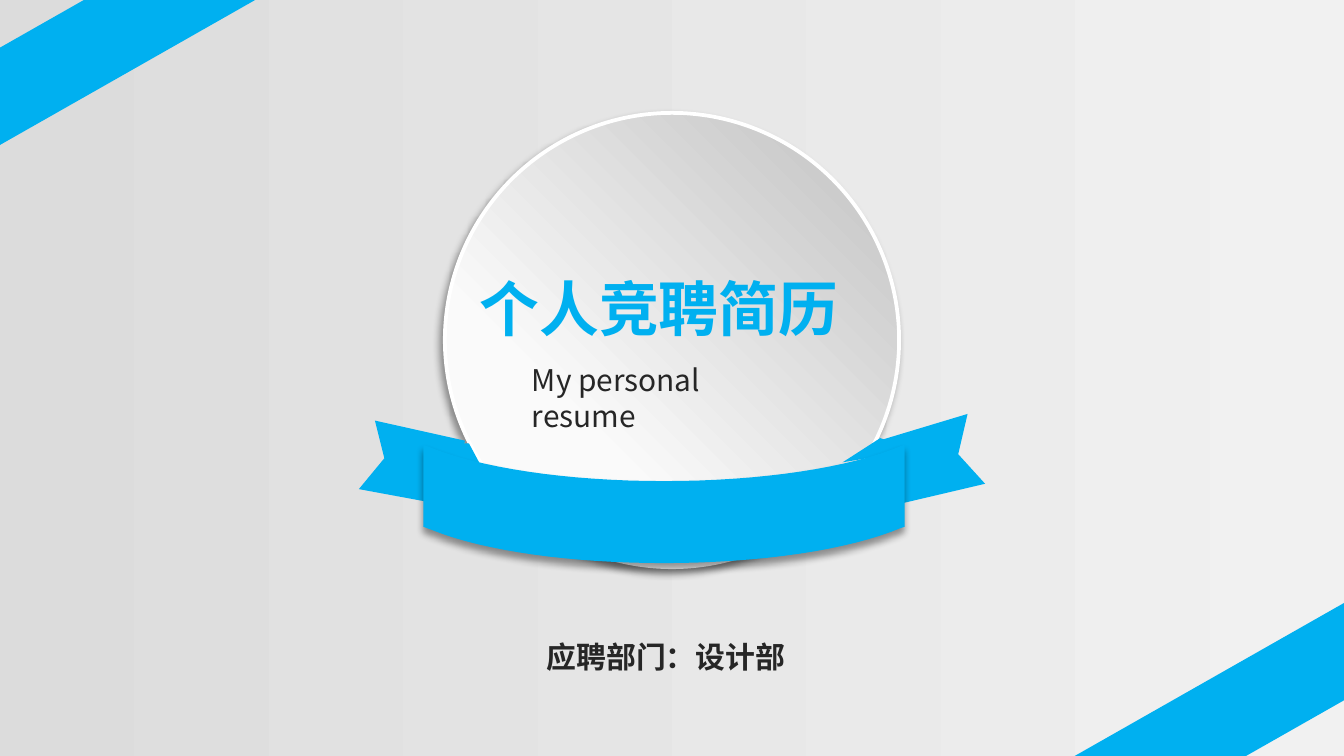
from dataclasses import dataclass

from lxml.etree import SubElement as Sub
from pptx import Presentation
from pptx.dml.color import RGBColor as Rgb
from pptx.enum.shapes import MSO_SHAPE as Kind
from pptx.oxml.ns import qn
from pptx.util import Inches, Pt

Point = tuple[float, float]


@dataclass(frozen=True)
class Theme:
    blue: str = "00B0F0"
    ink: str = "262626"
    white: str = "FFFFFF"
    shade: str = "000000"
    back: tuple = ("DCDCDC", "F1F1F1")
    disc: tuple = ("BFBFBF", "FAFAFA")
    font: str = "Noto Sans CJK SC"
    title: int = 32
    body: int = 16


@dataclass(frozen=True)
class Label:
    text: str
    box: tuple[float, float, float, float]
    size: int
    color: str
    bold: bool


THEME = Theme()


def blend(fill, colors: tuple, angle: float, end: float = 1) -> None:
    """Fill with two colours; the angle runs counter-clockwise."""
    fill.gradient()
    fill.gradient_angle = angle
    for stop, color, pos in zip(fill.gradient_stops, colors, (0, end)):
        stop.color.rgb = Rgb.from_string(color)
        stop.position = pos


def paint(shape, color: str = THEME.blue) -> None:
    shape.shadow.inherit = False
    shape.fill.solid()
    shape.fill.fore_color.rgb = Rgb.from_string(color)
    shape.line.fill.background()


def shade(shape, angle: int) -> None:
    """Cast a soft shadow in the given direction."""
    shape.shadow.inherit = False
    effects = shape._element.spPr.find(qn("a:effectLst"))
    outer = Sub(effects, qn("a:outerShdw"), blurRad=str(Pt(4)), dist=str(Pt(3)),
                dir=str(angle * 60000), algn="ctr", rotWithShape="0")
    color = Sub(outer, qn("a:srgbClr"), val=THEME.shade)
    Sub(color, qn("a:alpha"), val="40000")


def curve(a: Point, b: Point, c: Point, d: Point, steps: int = 16) -> list[Point]:
    """Points along a cubic curve, without its start."""
    def at(t: float, i: int) -> float:
        u = 1 - t
        return u**3 * a[i] + 3 * u * u * t * b[i] + 3 * u * t * t * c[i] + t**3 * d[i]

    return [(at(n / steps, 0), at(n / steps, 1)) for n in range(1, steps + 1)]


def outline(slide, points: list[Point]):
    start, *rest = [(Inches(x), Inches(y)) for x, y in points]
    pen = slide.shapes.build_freeform(*start, scale=1.0)
    pen.add_line_segments(rest, close=True)
    shape = pen.convert_to_shape()
    paint(shape)
    return shape


def write(slide, text: str, *, box: tuple, size: int, color: str, bold: bool) -> None:
    frame = slide.shapes.add_textbox(*map(Inches, box)).text_frame
    frame.word_wrap = True
    run = frame.paragraphs[0].add_run()
    run.text = text
    font = run.font
    font.name, font.size, font.bold = THEME.font, Pt(size), bold
    font.color.rgb = Rgb.from_string(color)
    Sub(run._r.get_or_add_rPr(), qn("a:ea"), typeface=THEME.font)


def badge(slide) -> None:
    disc = slide.shapes.add_shape(Kind.OVAL, *map(Inches, (3.31, 0.84, 3.38, 3.38)))
    blend(disc.fill, THEME.disc, 225, 0.7)
    disc.line.color.rgb = Rgb.from_string(THEME.white)
    disc.line.width = Pt(2)
    shade(disc, 135)


def ribbon(slide) -> None:
    # Tails, then the folds behind the front band
    parts = [outline(slide, points) for points in (
        [(2.79, 3.13), (3.46, 3.28), (3.32, 3.76), (2.67, 3.64), (2.86, 3.41)],
        [(7.33, 3.6), (6.65, 3.76), (6.57, 3.27), (7.2, 3.08), (7.13, 3.38)],
        [(3.14, 3.29), (3.49, 3.3), (3.64, 3.58)],
        [(6.27, 3.44), (6.55, 3.26), (6.73, 3.32), (6.69, 3.37)],
    )]
    # Front band: curved lower edge, then curved upper edge
    low = (curve((6.7, 3.93), (6.32, 4.09), (5.67, 4.19), (4.94, 4.19))
           + curve((4.94, 4.19), (4.24, 4.19), (3.61, 4.1), (3.23, 3.95)))
    top = (curve((3.18, 3.32), (3.56, 3.48), (4.21, 3.58), (4.94, 3.58))
           + curve((4.94, 3.58), (5.67, 3.58), (6.32, 3.48), (6.7, 3.32)))
    front = outline(slide, [(6.73, 3.31), (6.73, 3.92), (6.7, 3.93), *low,
                            (3.15, 3.92), (3.15, 3.31), (3.18, 3.32), *top])
    shade(front, 90)
    slide.shapes.add_group_shape([*parts, front])


def stripe(slide, left: float, top: float) -> None:
    shape = slide.shapes.add_shape(Kind.RECTANGLE, *map(Inches, (left, top, 3.39, 0.63)))
    shape.rotation = 330.4
    paint(shape)


LABELS = (
    Label("个人竞聘简历", (3.47, 1.97, 2.89, 0.64), THEME.title, THEME.blue, True),
    Label("My personal resume", (3.86, 2.64, 2.22, 0.37), THEME.body, THEME.ink, False),
    Label("应聘部门：设计部", (3.97, 4.7, 2.06, 0.37), THEME.body, THEME.ink, True),
)


def main() -> None:
    # Wide 16:9 page
    deck = Presentation()
    deck.slide_width, deck.slide_height = Inches(10), Inches(10 * 9 / 16)
    slide = deck.slides.add_slide(deck.slide_layouts[6])
    blend(slide.background.fill, THEME.back, 0)

    # Badge and ribbon
    badge(slide)
    ribbon(slide)

    # Wording
    for item in LABELS:
        write(slide, item.text, box=item.box, size=item.size,
              color=item.color, bold=item.bold)

    # Corner stripes
    for left, top in ((-0.97, -0.01), (7.45, 5.02)):
        stripe(slide, left, top)

    deck.save("out.pptx")


if __name__ == "__main__":
    main()
